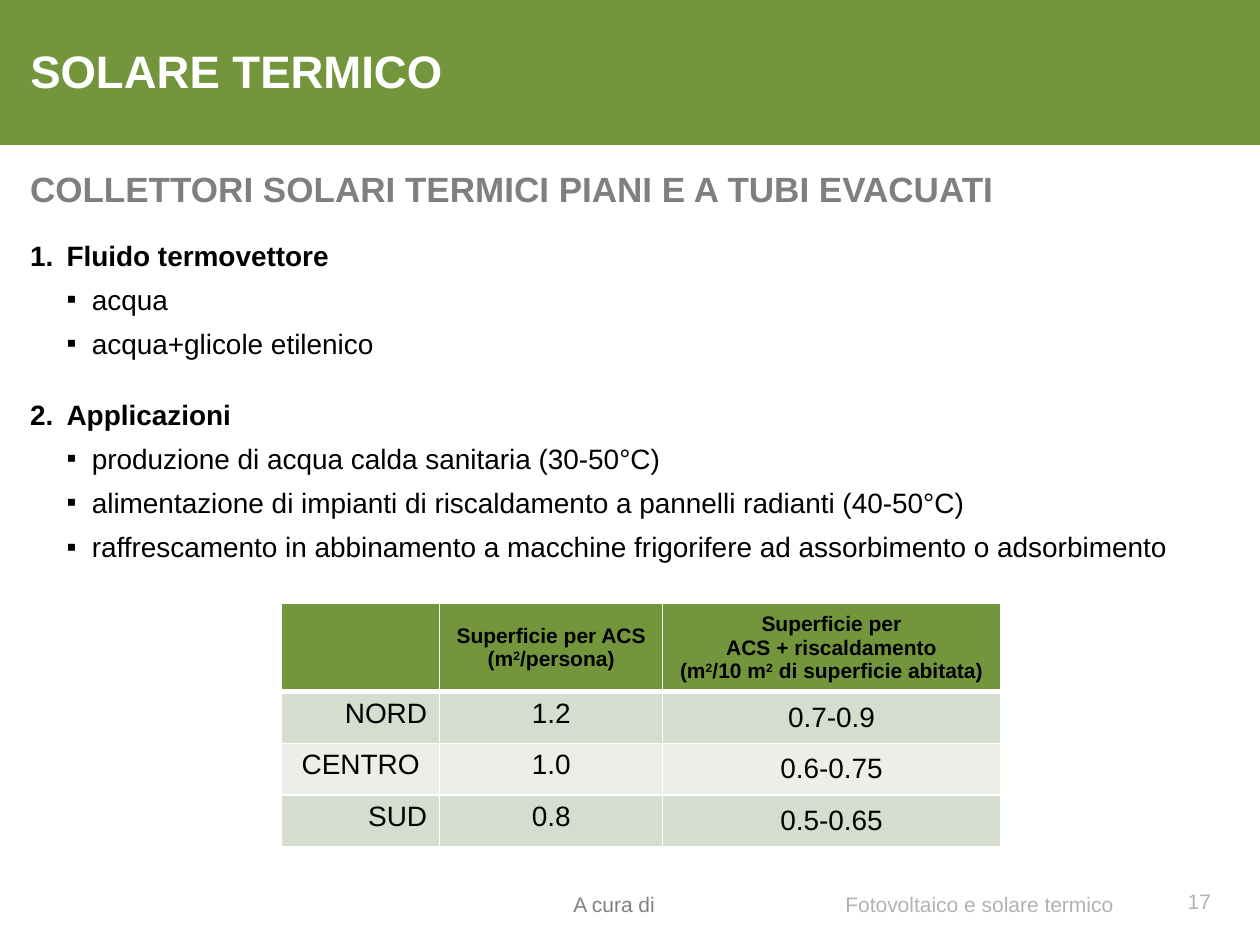
from lxml import etree
from pptx import Presentation
from pptx.dml.color import RGBColor
from pptx.enum import shapes, text
from pptx.oxml.ns import qn
from pptx.util import Inches, Pt

COLORS = {
    "green": "73963D", "white": "FFFFFF", "black": "000000",
    "heading": "7F7F7F", "author": "808080", "footer": "B2B2B2",
    "row_dark": "D5DDCE", "row_light": "EBEFE8",
}
FONT = "Arial"
LEFT, MIDDLE = text.PP_ALIGN.LEFT, text.MSO_ANCHOR.MIDDLE
CENTER, RIGHT = text.PP_ALIGN.CENTER, text.PP_ALIGN.RIGHT

# (number or None for a bullet, wording, space before in points)
OUTLINE = [
    (1, "Fluido termovettore", 0),
    (None, "acqua", 6),
    (None, "acqua+glicole etilenico", 6),
    (2, "Applicazioni", 21.5),
    (None, "produzione di acqua calda sanitaria (30-50°C)", 6),
    (None, "alimentazione di impianti di riscaldamento a pannelli radianti (40-50°C)", 6),
    (None, "raffrescamento in abbinamento a macchine frigorifere ad assorbimento o adsorbimento", 6),
]
# In table headers, ^ puts the next character in superscript.
HEADERS = [
    [],
    ["Superficie per ACS (m^2/persona)"],
    ["Superficie per", "ACS + riscaldamento", "(m^2/10 m^2 di superficie abitata)"],
]
AREAS = [
    ("NORD", "1.2", "0.7-0.9"),
    ("CENTRO", "1.0", "0.6-0.75"),
    ("SUD", "0.8", "0.5-0.65"),
]


def rgb(color):
    return RGBColor.from_string(COLORS[color])


class SlideBuilder:
    def __init__(self, prs):
        self.slide = prs.slides.add_slide(prs.slide_layouts[5])

    def style(self, paragraph, size, color="black", bold=False, align=LEFT):
        paragraph.alignment = align
        font = paragraph.font
        font.name, font.size, font.bold = FONT, Pt(size), bold
        font.color.rgb = rgb(color)

    def frame(self, shape, insets, anchor):
        frame = shape.text_frame
        frame.word_wrap = True
        frame.auto_size = text.MSO_AUTO_SIZE.NONE
        frame.vertical_anchor = anchor
        (frame.margin_left, frame.margin_top,
         frame.margin_right, frame.margin_bottom) = map(Inches, insets)
        return frame

    def band(self, box, color):
        """Add a plain rectangle behind everything else."""
        band = self.slide.shapes.add_shape(shapes.MSO_SHAPE.RECTANGLE, *map(Inches, box))
        band.shadow.inherit = False
        band.fill.solid()
        band.fill.fore_color.rgb = rgb(color)
        band.line.fill.background()
        self.slide.shapes._spTree.insert(2, band._element)

    def title(self, box, wording):
        title = self.slide.shapes.title
        title.left, title.top, title.width, title.height = map(Inches, box)
        frame = self.frame(title, (0.1, 0, 0.1, 0), MIDDLE)
        frame.text = wording
        self.style(frame.paragraphs[0], 26, "white", True)

    def textbox(self, box, insets=(0.1, 0.05, 0.1, 0.05), anchor=text.MSO_ANCHOR.TOP):
        shape = self.slide.shapes.add_textbox(*map(Inches, box))
        return self.frame(shape, insets, anchor)

    def label(self, box, wording, size, color, bold=False, align=LEFT, **layout):
        frame = self.textbox(box, **layout)
        frame.text = wording
        self.style(frame.paragraphs[0], size, color, bold, align)

    def mark(self, paragraph, number):
        """Give a paragraph its number, or a square bullet without one."""
        indent, hanging = (0.29, 0.29) if number else (0.49, 0.2)
        props = paragraph._p.get_or_add_pPr()
        props.set("marL", str(Inches(indent)))
        props.set("indent", str(-Inches(hanging)))
        etree.SubElement(props, qn("a:buFont"), typeface=FONT)
        if number:
            etree.SubElement(props, qn("a:buAutoNum"), type="arabicPeriod", startAt=str(number))
        else:
            etree.SubElement(props, qn("a:buChar"), char="▪")

    def outline(self, box, items):
        frame = self.textbox(box)
        for i, (number, wording, gap) in enumerate(items):
            paragraph = frame.add_paragraph() if i else frame.paragraphs[0]
            paragraph.text = wording
            self.mark(paragraph, number)
            paragraph.space_before = Pt(gap)
            self.style(paragraph, 16, bold=number is not None)

    def fill_cell(self, cell, color, bottom=1):
        props = cell._tc.get_or_add_tcPr()
        for side, width in (("L", 1), ("R", 1), ("T", 1), ("B", bottom)):
            line = etree.SubElement(props, qn("a:ln" + side), w=str(Pt(width)))
            solid = etree.SubElement(line, qn("a:solidFill"))
            etree.SubElement(solid, qn("a:srgbClr"), val=COLORS["white"])
        cell.fill.solid()
        cell.fill.fore_color.rgb = rgb(color)

    def header_cell(self, cell, lines):
        self.fill_cell(cell, "green", bottom=3)
        cell.vertical_anchor = MIDDLE
        for i, line in enumerate(lines):
            paragraph = cell.text_frame.add_paragraph() if i else cell.text_frame.paragraphs[0]
            start, *raised = line.split("^")
            paragraph.add_run().text = start
            for part in raised:
                superscript = paragraph.add_run()
                superscript.text = part[0]
                superscript.font._element.set("baseline", "30000")
                paragraph.add_run().text = part[1:]
            self.style(paragraph, 12, bold=True, align=CENTER)

    def table(self, left, top, widths, heights):
        table = self.slide.shapes.add_table(
            len(heights), len(widths), Inches(left), Inches(top),
            Inches(sum(widths)), Inches(sum(heights))).table
        for column, width in zip(table.columns, widths):
            column.width = Inches(width)
        for row, height in zip(table.rows, heights):
            row.height = Inches(height)
        for col, lines in enumerate(HEADERS):
            self.header_cell(table.cell(0, col), lines)
        for row, values in enumerate(AREAS, 1):
            for col, value in enumerate(values):
                cell = table.cell(row, col)
                self.fill_cell(cell, "row_dark" if row % 2 else "row_light")
                cell.text = value
                self.style(cell.text_frame.paragraphs[0], 16, align=CENTER if col else RIGHT)
                if col == 2:
                    cell.vertical_anchor = MIDDLE
        table.cell(2, 0).margin_right = Inches(0.16)


def main():
    prs = Presentation()
    prs.slide_width, prs.slide_height = Inches(10), Inches(7.5)
    page = SlideBuilder(prs)
    page.band((0, 0, 10, 1.15), "green")
    page.title((0.14, 0.34, 9, 0.44), "SOLARE TERMICO")
    page.label((0.14, 1.28, 9, 0.44), "COLLETTORI SOLARI TERMICI PIANI E A TUBI EVACUATI",
               20, "heading", bold=True)
    page.outline((0.14, 1.84, 10.28, 3.79), OUTLINE)
    page.table(2.23, 4.79, (1.26, 1.77, 2.68), (0.7, 0.41, 0.41, 0.41))

    footer = {"insets": (0, 0.05, 0.1, 0), "anchor": MIDDLE}
    page.label((4.55, 6.95, 2.2, 0.4), "A cura di", 12, "author", **footer)
    page.label((6.71, 6.95, 2.43, 0.4), "Fotovoltaico e solare termico", 12, "footer", **footer)
    page.label((9.14, 6.95, 0.57, 0.4), "17", 12, "footer", align=RIGHT, anchor=MIDDLE)
    prs.save("out.pptx")


if __name__ == "__main__":
    main()
